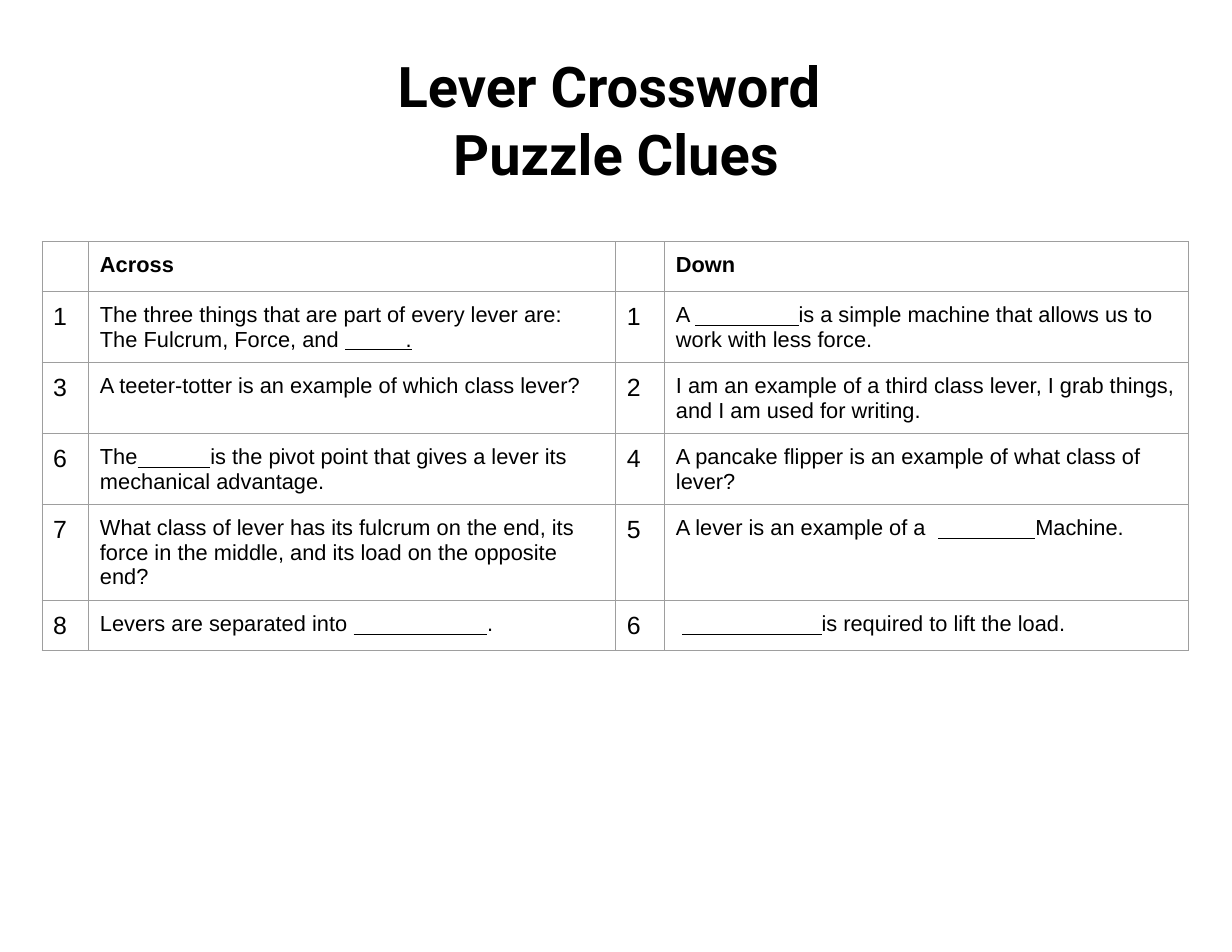
import lxml.etree
import pptx
import pptx.dml.color
import pptx.enum.text
import pptx.oxml.ns
import pptx.util

EMU_PER_PX = 914400 / 112


def px(length):
    return pptx.util.Emu(round(length * EMU_PER_PX))


def colour(hex_code):
    return pptx.dml.color.RGBColor.from_string(hex_code)


def blank(width, ending=""):
    """An underlined gap to write in, measured in spaces."""
    return " " * width + ending, True


class CluePage:
    ink = "000000"
    grid = "9E9E9E"
    grid_pt = 0.75
    inset = 11

    def __init__(self, width, height):
        self.deck = pptx.Presentation()
        self.deck.slide_width = px(width)
        self.deck.slide_height = px(height)
        self.slide = self.deck.slides.add_slide(self.deck.slide_layouts[5])

    def style(self, paragraph, font_name, size, bold=False):
        font = paragraph.font
        font.name = font_name
        font.size = pptx.util.Pt(size)
        font.bold = bold
        font.color.rgb = colour(self.ink)

    def pad(self, box):
        box.margin_left = box.margin_right = px(self.inset)
        box.margin_top = box.margin_bottom = px(self.inset)

    def title(self, lines, left, top, width, height):
        heading = self.slide.shapes.title
        heading.left, heading.top = px(left), px(top)
        heading.width, heading.height = px(width), px(height)
        frame = heading.text_frame
        frame.text = "\n".join(lines)
        frame.word_wrap = True
        frame.auto_size = pptx.enum.text.MSO_AUTO_SIZE.NONE
        frame.vertical_anchor = pptx.enum.text.MSO_ANCHOR.TOP
        self.pad(frame)
        for paragraph in frame.paragraphs:
            paragraph.alignment = pptx.enum.text.PP_ALIGN.CENTER
            self.style(paragraph, "Roboto", 36, bold=True)

    def outline(self, cell):
        qn = pptx.oxml.ns.qn
        properties = cell._tc.get_or_add_tcPr()
        for side in ("a:lnL", "a:lnR", "a:lnT", "a:lnB"):
            line = lxml.etree.SubElement(
                properties, qn(side), w=str(pptx.util.Pt(self.grid_pt)))
            fill = lxml.etree.SubElement(line, qn("a:solidFill"))
            lxml.etree.SubElement(fill, qn("a:srgbClr"), val=self.grid)

    def cell(self, cell, pieces, size, bold):
        """Fill a cell from plain strings and (text, underlined) pairs."""
        self.pad(cell)
        self.outline(cell)
        cell.fill.background()
        paragraph = cell.text_frame.paragraphs[0]
        self.style(paragraph, "Arial", size, bold)
        for piece in pieces:
            text, underlined = (piece, False) if isinstance(piece, str) else piece
            run = paragraph.add_run()
            run.text = text
            if underlined:
                run.font.underline = True

    def table(self, rows, left, top, widths, heights):
        frame = self.slide.shapes.add_table(
            len(rows), len(widths), px(left), px(top),
            px(sum(widths)), px(sum(heights)))
        table = frame.table
        table.first_row = table.horz_banding = False
        for column, width in zip(table.columns, widths):
            column.width = px(width)
        for row, height in zip(table.rows, heights):
            row.height = px(height)
        for r, row in enumerate(rows):
            for c, pieces in enumerate(row):
                is_number = r > 0 and c % 2 == 0
                self.cell(table.cell(r, c), pieces,
                          size=16 if is_number else 14, bold=r == 0)

    def save(self):
        self.deck.save("out.pptx")


ACROSS = [
    ("1", ["The three things that are part of every lever are: "
           "The Fulcrum, Force, and ", blank(10, ".")]),
    ("3", ["A teeter-totter is an example of which class lever?"]),
    ("6", ["The", blank(12),
           "is the pivot point that gives a lever its mechanical advantage."]),
    ("7", ["What class of lever has its fulcrum on the end, its force in the "
           "middle, and its load on the opposite end?"]),
    ("8", ["Levers are separated into ", blank(22), "."]),
]
DOWN = [
    ("1", ["A ", blank(17),
           "is a simple machine that allows us to work with less force."]),
    ("2", ["I am an example of a third class lever, I grab things, "
           "and I am used for writing."]),
    ("4", ["A pancake flipper is an example of what class of lever?"]),
    ("5", ["A lever is an example of a  ", blank(16), "Machine."]),
    ("6", [" ", blank(23), "is required to lift the load."]),
]


def main():
    page = CluePage(1232, 952)
    page.title(["Lever Crossword ", "Puzzle Clues"], 0, 41, 1232, 172)
    header = [[], ["Across"], [], ["Down"]]
    clues = [[*across, *down] for across, down in zip(ACROSS, DOWN)]
    page.table([header, *clues], left=42, top=242,
               widths=[47, 527, 49, 524], heights=[50, 71, 71, 71, 96, 50])
    page.save()


if __name__ == "__main__":
    main()
